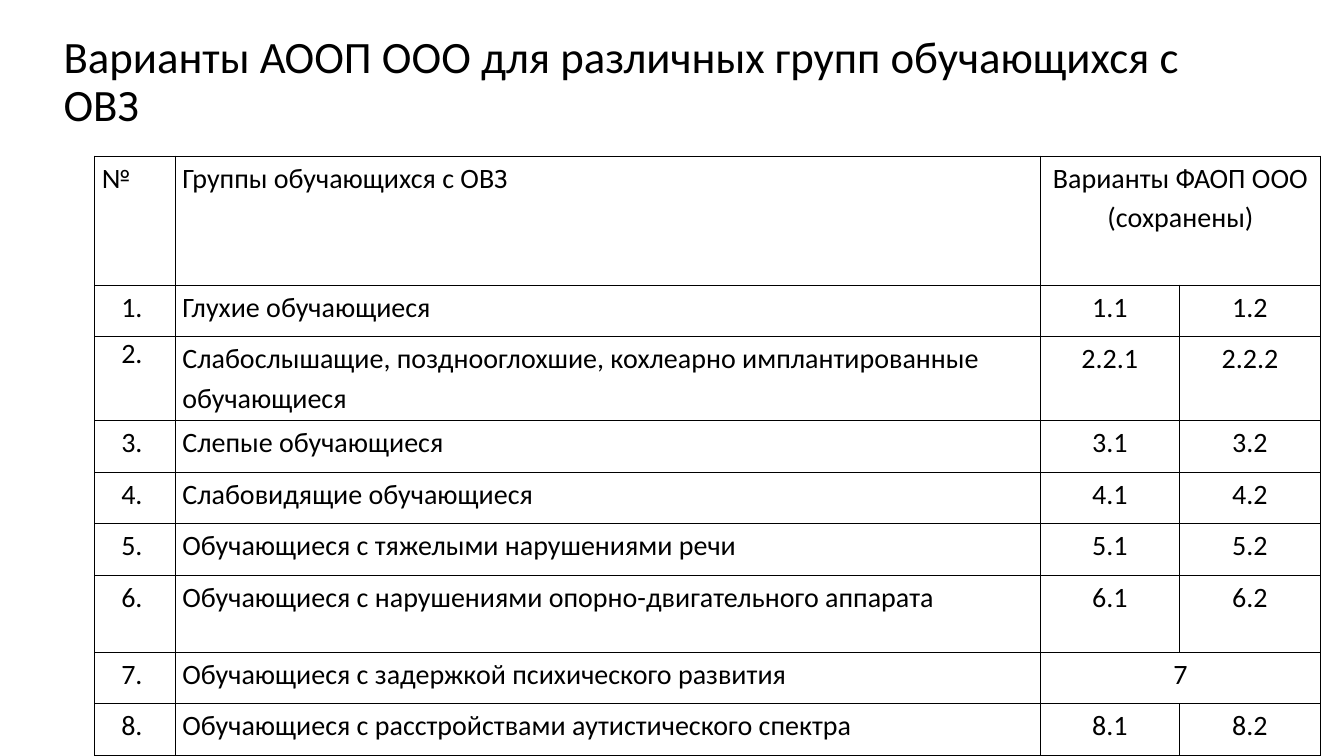
from dataclasses import dataclass

from lxml import etree
from pptx import Presentation
from pptx.dml.color import RGBColor
from pptx.enum.text import MSO_ANCHOR, PP_ALIGN as Align
from pptx.oxml.ns import qn
from pptx.table import _Cell as Cell
from pptx.text.text import TextFrame
from pptx.util import Pt

FONT = "Calibri"
BLACK = "000000"
COLUMN_WIDTHS = (57.6, 617.8, 99.4, 100.8)
HEADER_HEIGHT = 92.2
ROW_HEIGHT = 36.8


@dataclass
class LearnerGroup:
    name: str
    variants: tuple[str, ...]
    height: float = ROW_HEIGHT
    number_spacing: float = 1.15


GROUPS = [
    LearnerGroup("Глухие обучающиеся", ("1.1", "1.2")),
    LearnerGroup("Слабослышащие, позднооглохшие, кохлеарно имплантированные обучающиеся",
                 ("2.2.1", "2.2.2"), height=60, number_spacing=1.0),
    LearnerGroup("Слепые обучающиеся", ("3.1", "3.2")),
    LearnerGroup("Слабовидящие обучающиеся", ("4.1", "4.2")),
    LearnerGroup("Обучающиеся с тяжелыми нарушениями речи", ("5.1", "5.2")),
    LearnerGroup("Обучающиеся с нарушениями опорно-двигательного аппарата",
                 ("6.1", "6.2"), height=55),
    LearnerGroup("Обучающиеся с задержкой психического развития", ("7",)),
    LearnerGroup("Обучающиеся с расстройствами аутистического спектра", ("8.1", "8.2")),
]


def color(value: str) -> RGBColor:
    return RGBColor.from_string(value)


def write(frame: TextFrame, text: str, size: float, align: Align, spacing: float) -> None:
    frame.text = text
    for paragraph in frame.paragraphs:
        paragraph.alignment = align
        paragraph.line_spacing = spacing
        for run in paragraph.runs:
            run.font.name = FONT
            run.font.size = Pt(size)
            run.font.bold = False
            run.font.color.rgb = color(BLACK)


def frame_cell(cell: Cell) -> None:
    """Clear the fill and draw thin black borders on all four sides."""
    cell.fill.background()
    properties = cell._tc.get_or_add_tcPr()
    for index, side in enumerate(("a:lnL", "a:lnR", "a:lnT", "a:lnB")):
        border = etree.Element(qn(side), w=str(Pt(1)))
        solid = etree.SubElement(border, qn("a:solidFill"))
        etree.SubElement(solid, qn("a:srgbClr"), val=BLACK)
        properties.insert(index, border)


def fill_cell(cell: Cell, text: str, align: Align = Align.CENTER, spacing: float = 1.15) -> None:
    cell.margin_left = cell.margin_right = Pt(5)
    cell.margin_top = cell.margin_bottom = Pt(0)
    cell.vertical_anchor = MSO_ANCHOR.TOP
    write(cell.text_frame, text, 20, align, spacing)


def main() -> None:
    presentation = Presentation()
    presentation.slide_width, presentation.slide_height = Pt(960), Pt(540)
    slide = presentation.slides.add_slide(presentation.slide_layouts[5])

    # Title
    title = slide.shapes.title
    title.left, title.top, title.width, title.height = Pt(38.2), Pt(7.2), Pt(828), Pt(104.4)
    title.text_frame.vertical_anchor = MSO_ANCHOR.MIDDLE
    write(title.text_frame, "Варианты АООП ООО для различных групп обучающихся с ОВЗ",
          32, Align.LEFT, 0.9)

    # Table grid
    heights = [HEADER_HEIGHT] + [group.height for group in GROUPS]
    table = slide.shapes.add_table(
        len(heights), len(COLUMN_WIDTHS), Pt(67.7), Pt(111.6),
        Pt(sum(COLUMN_WIDTHS)), Pt(sum(heights))).table
    table.first_row = table.horz_banding = False
    for column, width in zip(table.columns, COLUMN_WIDTHS):
        column.width = Pt(width)
    for row, height in zip(table.rows, heights):
        row.height = Pt(height)
    for cell in table.iter_cells():
        frame_cell(cell)

    # Header row
    table.cell(0, 2).merge(table.cell(0, 3))
    fill_cell(table.cell(0, 0), "№", Align.LEFT)
    fill_cell(table.cell(0, 1), "Группы обучающихся с ОВЗ", Align.LEFT)
    fill_cell(table.cell(0, 2), "Варианты ФАОП ООО\n(сохранены)")

    # Learner groups
    for number, group in enumerate(GROUPS, start=1):
        fill_cell(table.cell(number, 0), f"{number}. ", spacing=group.number_spacing)
        fill_cell(table.cell(number, 1), group.name, Align.LEFT)
        if len(group.variants) == 1:
            table.cell(number, 2).merge(table.cell(number, 3))
        for column, variant in enumerate(group.variants, start=2):
            fill_cell(table.cell(number, column), variant)

    presentation.save("out.pptx")


if __name__ == "__main__":
    main()
